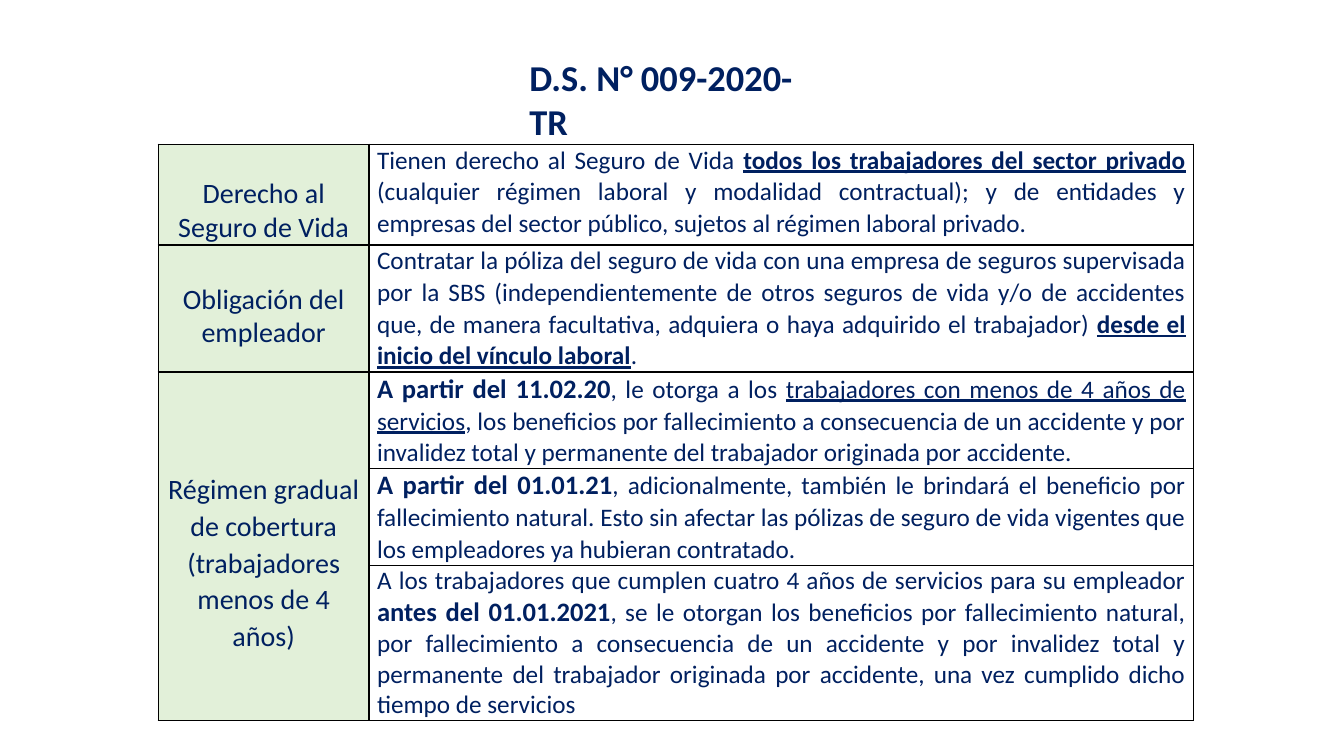
from lxml import etree
from pptx import Presentation
from pptx.dml.color import RGBColor
from pptx.enum.text import MSO_ANCHOR, MSO_AUTO_SIZE, PP_ALIGN
from pptx.oxml.ns import qn
from pptx.util import Inches, Pt

TOP = MSO_ANCHOR.TOP
NO_AUTOFIT = MSO_AUTO_SIZE.NONE
LEFT, CENTER, JUSTIFY = PP_ALIGN.LEFT, PP_ALIGN.CENTER, PP_ALIGN.JUSTIFY

NAVY = RGBColor(0x00, 0x20, 0x60)
PALE_GREEN = RGBColor(0xE2, 0xF0, 0xD9)
WHITE = RGBColor(0xFF, 0xFF, 0xFF)
BLACK = RGBColor(0x00, 0x00, 0x00)

FONT = "Calibri"
TITLE_ONLY = 5
COLUMN_WIDTHS = (2.09, 8.18)
ROW_HEIGHTS = (1.0, 1.26, 0.95, 0.96, 1.54)

STRONG = {"bold": True, "underline": True}
DATE = {"bold": True, "size": 19}
UNDERLINED = {"underline": True}

LABELS = (
    ("Derecho al Seguro de Vida", 0.17, 0.33, 0.97),
    ("Obligación del empleador", 0.08, 0.38, 0.96),
    ("Régimen gradual de cobertura (trabajadores menos de 4 años)", 0.08, 0.98, 1.07),
)

PROVISIONS = (
    (
        ("Tienen derecho al Seguro de Vida ", {}),
        ("todos los trabajadores del sector privado ", STRONG),
        ("(cualquier régimen laboral y modalidad contractual); y de entidades y "
         "empresas del sector público, sujetos al régimen laboral privado.", {}),
    ),
    (
        ("Contratar la póliza del seguro de vida con una empresa de seguros supervisada "
         "por la SBS (independientemente de otros seguros de vida y/o de accidentes "
         "que, de manera facultativa, adquiera o haya adquirido el trabajador) ", {}),
        ("desde el inicio del vínculo laboral", STRONG),
        (".", {}),
    ),
    (
        ("A partir del 11.02.20", DATE),
        (", le otorga a los ", {}),
        ("trabajadores con menos de 4 años de servicios", UNDERLINED),
        (", los beneficios por fallecimiento a consecuencia de un accidente y por "
         "invalidez total y permanente del trabajador originada por accidente.", {}),
    ),
    (
        ("A partir del 01.01.21", DATE),
        (", adicionalmente, también le brindará el beneficio por fallecimiento "
         "natural. Esto sin afectar las pólizas de seguro de vida vigentes que "
         "los empleadores ya hubieran contratado.", {}),
    ),
    (
        ("A los trabajadores que cumplen cuatro 4 años de servicios para su empleador ", {}),
        ("antes del 01.01.2021", DATE),
        (", se le otorgan los beneficios por fallecimiento natural, por fallecimiento "
         "a consecuencia de un accidente y por invalidez total y permanente del "
         "trabajador originada por accidente, una vez cumplido dicho tiempo de "
         "servicios", {}),
    ),
)


def add_text(paragraph, text, size=18, bold=False, underline=False):
    run = paragraph.add_run()
    run.text = text
    run.font.name = FONT
    run.font.size = Pt(size)
    run.font.bold = bold
    run.font.underline = underline
    run.font.color.rgb = NAVY


def add_title(slide, text):
    title = slide.shapes.title
    title.left, title.top = Inches(5.15), Inches(0.5)
    title.width, title.height = Inches(3.11), Inches(0.54)
    frame = title.text_frame
    frame.word_wrap = True
    frame.auto_size = NO_AUTOFIT
    frame.vertical_anchor = TOP
    paragraph = frame.paragraphs[0]
    paragraph.alignment = LEFT
    add_text(paragraph, text, size=26, bold=True)


def add_borders(cell):
    properties = cell._tc.get_or_add_tcPr()
    for position, side in enumerate(("a:lnL", "a:lnR", "a:lnT", "a:lnB")):
        border = etree.Element(qn(side), w=str(Pt(1)))
        fill = etree.SubElement(border, qn("a:solidFill"))
        etree.SubElement(fill, qn("a:srgbClr"), val=str(BLACK))
        properties.insert(position, border)


def format_cell(cell, fill, side_margin=0.08, top_margin=0):
    cell.fill.solid()
    cell.fill.fore_color.rgb = fill
    cell.margin_left = cell.margin_right = Inches(side_margin)
    cell.margin_top = Inches(top_margin)
    cell.margin_bottom = 0
    cell.vertical_anchor = TOP
    add_borders(cell)


def fill_cell(cell, runs, alignment, line_spacing):
    paragraph = cell.text_frame.paragraphs[0]
    paragraph.alignment = alignment
    paragraph.line_spacing = line_spacing
    for text, style in runs:
        add_text(paragraph, text, **style)


def add_regulation_table(slide):
    table = slide.shapes.add_table(
        len(ROW_HEIGHTS), len(COLUMN_WIDTHS), Inches(1.57), Inches(1.43),
        Inches(sum(COLUMN_WIDTHS)), Inches(sum(ROW_HEIGHTS))).table
    table.first_row = table.horz_banding = False
    for column, width in zip(table.columns, COLUMN_WIDTHS):
        column.width = Inches(width)
    for row, height in zip(table.rows, ROW_HEIGHTS):
        row.height = Inches(height)

    last = len(ROW_HEIGHTS) - 1
    table.cell(len(LABELS) - 1, 0).merge(table.cell(last, 0))
    for index, (label, side, top, spacing) in enumerate(LABELS):
        cell = table.cell(index, 0)
        format_cell(cell, PALE_GREEN, side, top)
        fill_cell(cell, [(label, {"size": 20})], CENTER, spacing)
    for index in range(len(LABELS), len(ROW_HEIGHTS)):
        format_cell(table.cell(index, 0), PALE_GREEN)
    for index, provision in enumerate(PROVISIONS):
        cell = table.cell(index, 1)
        format_cell(cell, WHITE)
        fill_cell(cell, provision, JUSTIFY, 1.0 if index == last else 1.03)


def main():
    presentation = Presentation()
    presentation.slide_width = Inches(13.33)
    presentation.slide_height = Inches(7.5)
    slide = presentation.slides.add_slide(presentation.slide_layouts[TITLE_ONLY])
    add_title(slide, "D.S. N° 009-2020-TR")
    add_regulation_table(slide)
    presentation.save("out.pptx")


if __name__ == "__main__":
    main()
